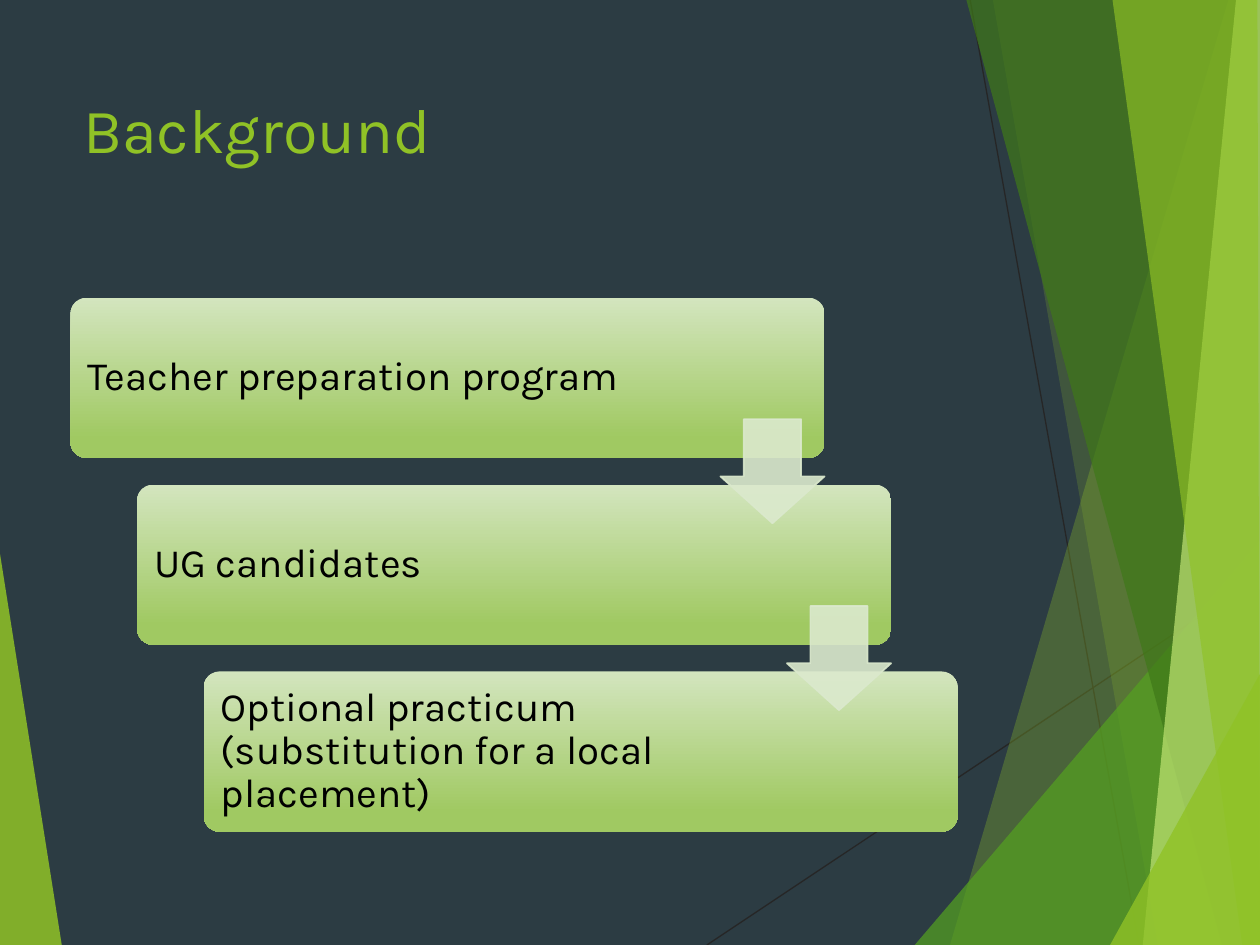
from dataclasses import dataclass

import pptx
import pptx.dml.color
import pptx.enum.shapes
import pptx.enum.text
import pptx.oxml.ns
import pptx.util
from lxml import etree


@dataclass(frozen=True)
class Theme:
    background: str = "2C3C43"
    lime: str = "90C226"
    green: str = "54A021"
    forest: str = "3F7819"
    pale: str = "C0E474"
    hairline: str = "262626"
    bar_top: str = "D3E5BE"
    bar_bottom: str = "A0C962"
    arrow: str = "DBE9CD"
    ink: str = "000000"
    font: str = "Karla"
    title_size: int = 36
    step_size: int = 23
    inset: float = 0.1


@dataclass(frozen=True)
class Box:
    left: float
    top: float
    width: float
    height: float

    def point(self, across, down):
        return (round(self.left + self.width * across / 100),
                round(self.top + self.height * down / 100))

    def region(self, across, down, width, height):
        return Box(*self.point(across, down),
                   round(self.width * width / 100), round(self.height * height / 100))

    def edges(self):
        return self.left, self.top, self.width, self.height


THEME = Theme()

HAIRLINES = [((56.1, 100), (100, 61)), ((77, 0), (90.4, 100))]

SHARDS = [
    (THEME.lime, 85, [(0, 58.6), (4.9, 100), (0, 100)]),
    (THEME.lime, 30, [(97.5, 0), (75.4, 100), (100, 100), (100, 0)]),
    (THEME.lime, 20, [(78.8, 0), (91.9, 100), (100, 100), (100, 0)]),
    (THEME.green, 72, [(72.6, 100), (100, 57.2), (100, 100)]),
    (THEME.forest, 70, [(76.7, 0), (97, 100), (100, 100), (100, 0)]),
    (THEME.pale, 70, [(98.1, 0), (90.7, 100), (100, 100), (100, 0)]),
    (THEME.lime, 65, [(88.3, 0), (98.6, 100), (100, 100), (99.8, 0)]),
    (THEME.lime, 80, [(88.1, 100), (100, 71.3), (100, 100)]),
]

STEPS = [
    "Teacher preparation program",
    "UG candidates",
    "Optional practicum (substitution for a local placement)",
]


def rgb(value):
    return pptx.dml.color.RGBColor.from_string(value)


def paint(fill, color, opacity=100):
    fill.solid()
    fill.fore_color.rgb = rgb(color)
    if opacity < 100:
        tint = fill._xPr.find(".//" + pptx.oxml.ns.qn("a:srgbClr"))
        etree.SubElement(tint, pptx.oxml.ns.qn("a:alpha"), val=str(opacity * 1000))


def write(shape, text, size, color, anchor, right_inset=THEME.inset, line_spacing=1.0):
    frame = shape.text_frame
    frame.text = text
    frame.word_wrap = True
    frame.auto_size = pptx.enum.text.MSO_AUTO_SIZE.NONE
    frame.vertical_anchor = anchor
    frame.margin_left = pptx.util.Inches(THEME.inset)
    frame.margin_right = pptx.util.Inches(right_inset)
    frame.margin_top = frame.margin_bottom = pptx.util.Inches(0.05)
    paragraph = frame.paragraphs[0]
    paragraph.alignment = pptx.enum.text.PP_ALIGN.LEFT
    paragraph.line_spacing = line_spacing
    font = paragraph.runs[0].font
    font.name = THEME.font
    font.size = pptx.util.Pt(size)
    font.color.rgb = rgb(color)


def draw_facets(slide, box):
    for start, end in HAIRLINES:
        hairline = slide.shapes.add_connector(
            pptx.enum.shapes.MSO_CONNECTOR.STRAIGHT, *box.point(*start), *box.point(*end))
        hairline.line.color.rgb = rgb(THEME.hairline)
        hairline.line.width = pptx.util.Pt(0.75)
        etree.SubElement(hairline._element.spPr, pptx.oxml.ns.qn("a:effectLst"))
    for color, opacity, corners in SHARDS:
        first, *others = [box.point(*corner) for corner in corners]
        outline = slide.shapes.build_freeform(*first)
        outline.add_line_segments(others, close=True)
        shard = outline.convert_to_shape()
        shard.shadow.inherit = False
        paint(shard.fill, color, opacity)
        shard.line.fill.background()


def place_title(slide, box, text):
    title = slide.shapes.title
    title.left, title.top, title.width, title.height = box.edges()
    write(title, text, THEME.title_size, THEME.lime, pptx.enum.text.MSO_ANCHOR.TOP)


def draw_bar(slide, box, text):
    bar = slide.shapes.add_shape(
        pptx.enum.shapes.MSO_SHAPE.ROUNDED_RECTANGLE, *box.edges())
    bar.adjustments[0] = 0.1
    bar.shadow.inherit = False
    bar.line.fill.background()
    bar.fill.gradient()
    bar.fill.gradient_angle = 270
    shades = [(0, THEME.bar_top), (0.88, THEME.bar_bottom)]
    for stop, (position, color) in zip(bar.fill.gradient_stops, shades):
        stop.position = position
        stop.color.rgb = rgb(color)
    write(bar, text, THEME.step_size, THEME.ink, pptx.enum.text.MSO_ANCHOR.MIDDLE,
          right_inset=1.45, line_spacing=0.9)


def draw_arrow(slide, box):
    arrow = slide.shapes.add_shape(pptx.enum.shapes.MSO_SHAPE.DOWN_ARROW, *box.edges())
    arrow.adjustments[0] = 0.55
    arrow.adjustments[1] = 0.45
    arrow.shadow.inherit = False
    paint(arrow.fill, THEME.arrow, 90)
    paint(arrow.line.fill, THEME.arrow, 90)
    arrow.line.width = pptx.util.Pt(1)


def draw_cascade(slide, box, steps):
    width, height = 85, 30
    shift = (100 - width) / (len(steps) - 1)
    drop = (100 - height) / (len(steps) - 1)
    bars = [box.region(i * shift, i * drop, width, height) for i in range(len(steps))]
    for bar, text in zip(bars, steps):
        draw_bar(slide, bar, text)
    for upper, lower in zip(bars, bars[1:]):
        side = round(upper.height * 0.65)
        gap_middle = (upper.top + upper.height + lower.top) / 2
        draw_arrow(slide, Box(upper.left + upper.width - side,
                              round(gap_middle - side / 2), side, side))


def main():
    deck = pptx.Presentation()
    deck.slide_width = pptx.util.Inches(10)
    deck.slide_height = pptx.util.Inches(7.5)
    slide = deck.slides.add_slide(deck.slide_layouts[5])
    paint(slide.background.fill, THEME.background)
    page = Box(0, 0, deck.slide_width, deck.slide_height)
    draw_facets(slide, page)
    place_title(slide, page.region(5.6, 8.93, 70.5, 19.2), "Background")
    draw_cascade(slide, page.region(5.6, 31.5, 70.4, 56.5), STEPS)
    deck.save("out.pptx")


if __name__ == "__main__":
    main()
